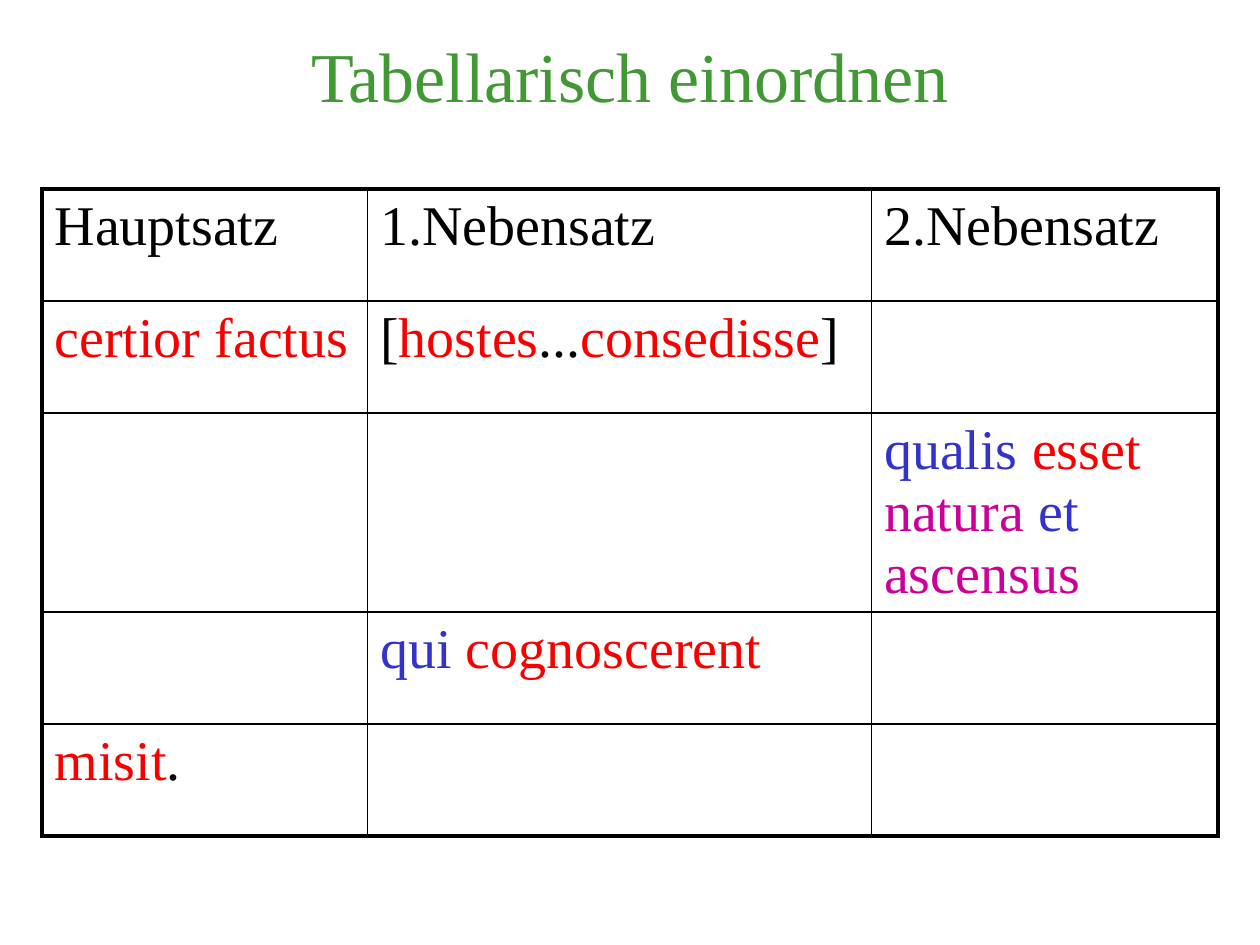
from lxml import etree
from pptx import Presentation
from pptx.dml.color import RGBColor
from pptx.enum.text import MSO_ANCHOR, PP_ALIGN
from pptx.oxml.ns import qn
from pptx.util import Pt

CENTER, LEFT = PP_ALIGN.CENTER, PP_ALIGN.LEFT
MIDDLE, TOP = MSO_ANCHOR.MIDDLE, MSO_ANCHOR.TOP

BLACK = RGBColor(0x00, 0x00, 0x00)
RED = RGBColor(0xF8, 0x00, 0x00)
BLUE = RGBColor(0x33, 0x33, 0xCC)
MAGENTA = RGBColor(0xCC, 0x00, 0x99)
GREEN = RGBColor(0x42, 0x98, 0x34)

FONT = "Times New Roman"
OUTER_LINE, INNER_LINE = 2.25, 1


def write(frame, parts, size=32, align=LEFT, anchor=TOP):
    """Fill a text frame or cell with (text, colour) parts on one paragraph."""
    frame.vertical_anchor = anchor
    frame.word_wrap = True
    paragraph = getattr(frame, "text_frame", frame).paragraphs[0]
    paragraph.alignment = align
    for text, color in parts:
        run = paragraph.add_run()
        run.text = text
        run.font.name = FONT
        run.font.size = Pt(size)
        run.font.color.rgb = color


def set_borders(cell, widths):
    """Draw black borders; widths come in the order left, right, top, bottom."""
    properties = cell._tc.get_or_add_tcPr()
    for index, (tag, width) in enumerate(zip(("a:lnL", "a:lnR", "a:lnT", "a:lnB"), widths)):
        line = etree.Element(qn(tag), w=str(Pt(width)))
        fill = etree.SubElement(line, qn("a:solidFill"))
        etree.SubElement(fill, qn("a:srgbClr"), val=str(BLACK))
        properties.insert(index, line)


prs = Presentation()
prs.slide_width, prs.slide_height = Pt(720), Pt(540)
slide = prs.slides.add_slide(prs.slide_layouts[6])

# Clause table: one row per step of the sentence, one column per clause level
clauses = [
    [[("Hauptsatz", BLACK)], [("1.Nebensatz", BLACK)], [("2.Nebensatz", BLACK)]],
    [[("certior factus", RED)],
     [("[", BLACK), ("hostes", RED), ("...", BLACK), ("consedisse", RED), ("]", BLACK)],
     []],
    [[], [],
     [("qualis ", BLUE), ("esset ", RED), ("natura ", MAGENTA), ("et ", BLUE),
      ("ascensus", MAGENTA)]],
    [[], [("qui ", BLUE), ("cognoscerent", RED)], []],
    [[("misit", RED), (".", BLACK)], [], []],
]
column_widths = [186, 288, 198]
row_heights = [64, 64, 113.4, 64, 64]
last_row, last_column = len(row_heights) - 1, len(column_widths) - 1

clause_table = slide.shapes.add_table(
    len(row_heights), len(column_widths),
    Pt(24), Pt(108), Pt(sum(column_widths)), Pt(sum(row_heights))).table
clause_table.first_row = False
clause_table.horz_banding = False
for column, width in zip(clause_table.columns, column_widths):
    column.width = Pt(width)
for row, height in zip(clause_table.rows, row_heights):
    row.height = Pt(height)

for r, row_clauses in enumerate(clauses):
    for c, parts in enumerate(row_clauses):
        cell = clause_table.cell(r, c)
        cell.fill.background()
        write(cell, parts)
        on_edge = (c == 0, c == last_column, r == 0, r == last_row)
        set_borders(cell, [OUTER_LINE if edge else INNER_LINE for edge in on_edge])

# Title
title = slide.shapes.add_textbox(Pt(0), Pt(0), Pt(720), Pt(85))
write(title.text_frame, [("Tabellarisch einordnen", GREEN)],
      size=40, align=CENTER, anchor=MIDDLE)

prs.save("out.pptx")
